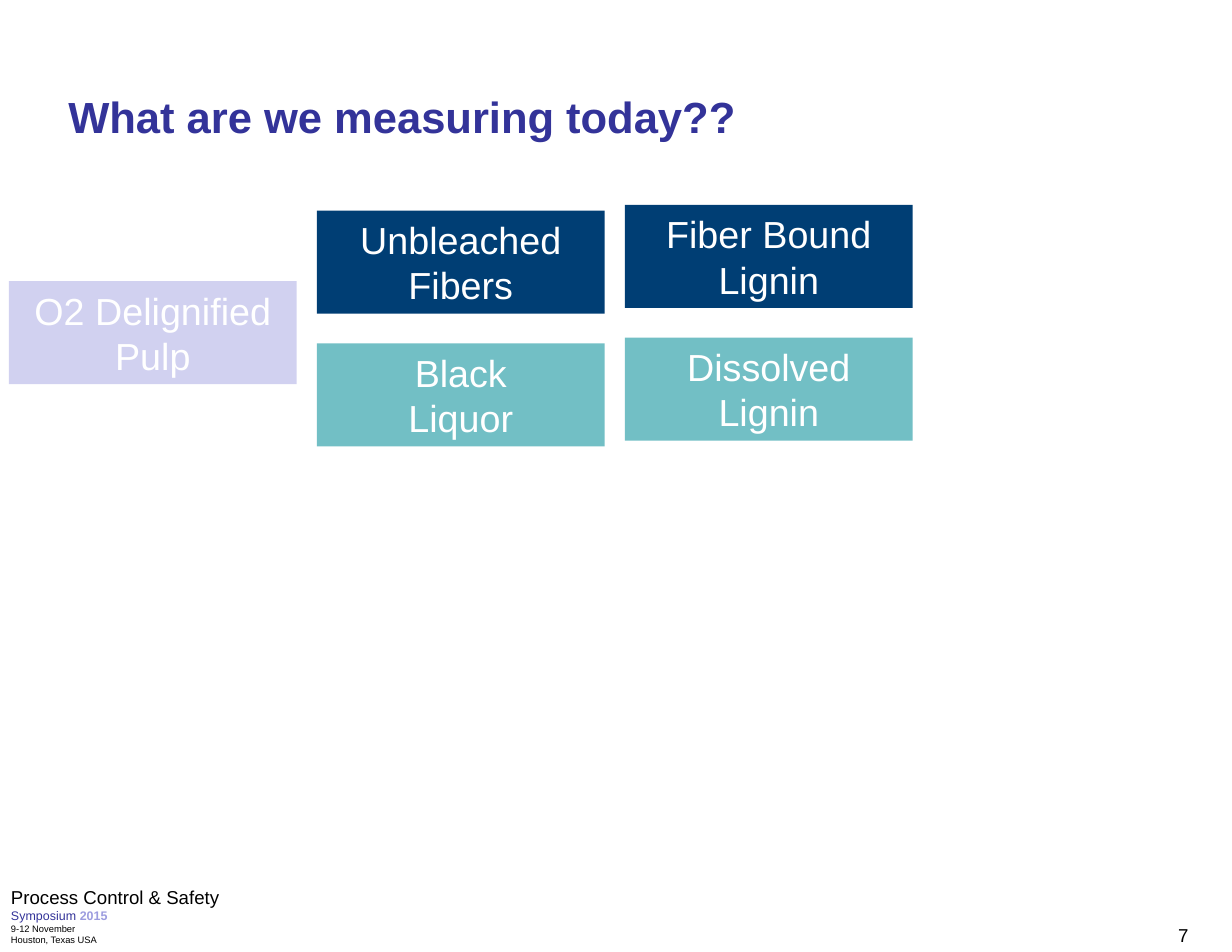
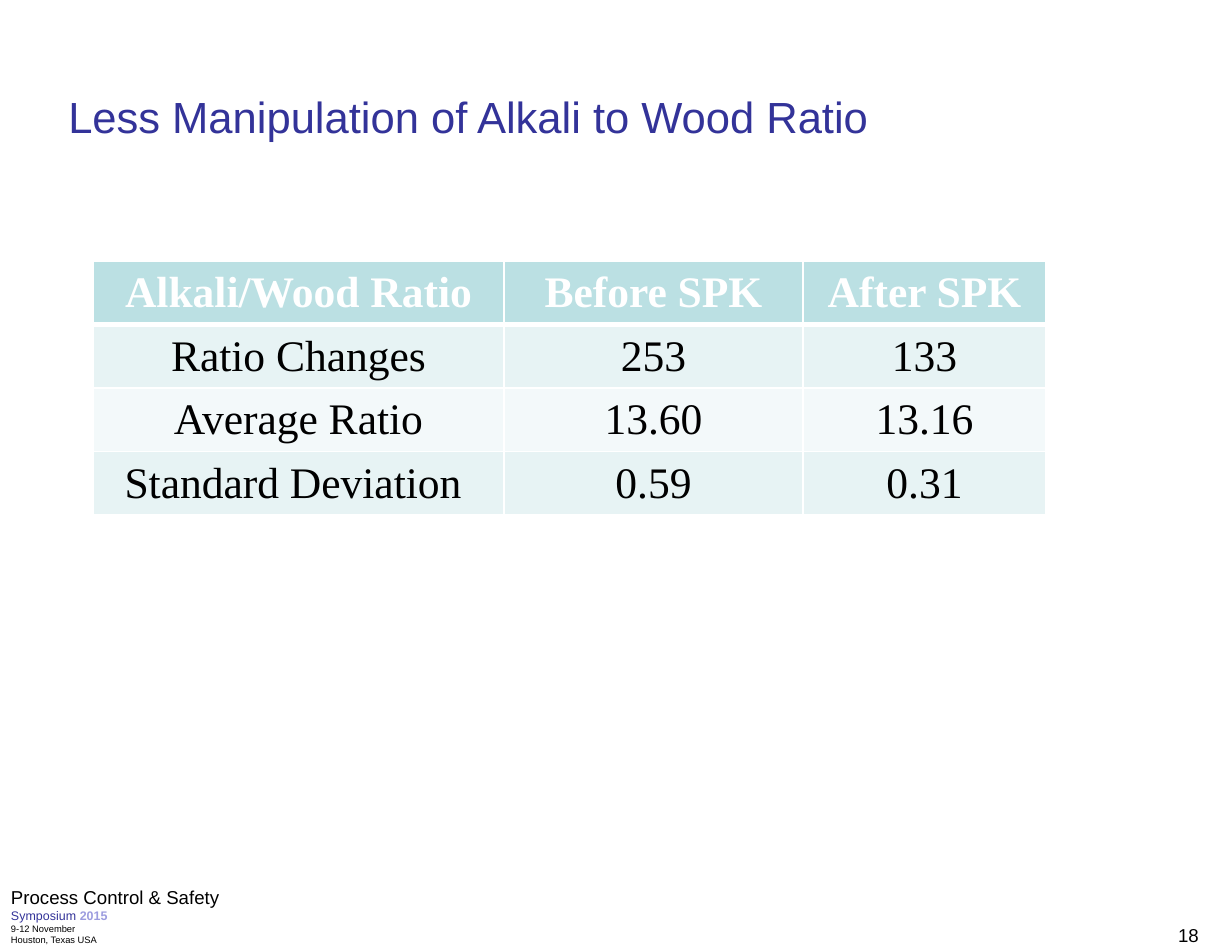
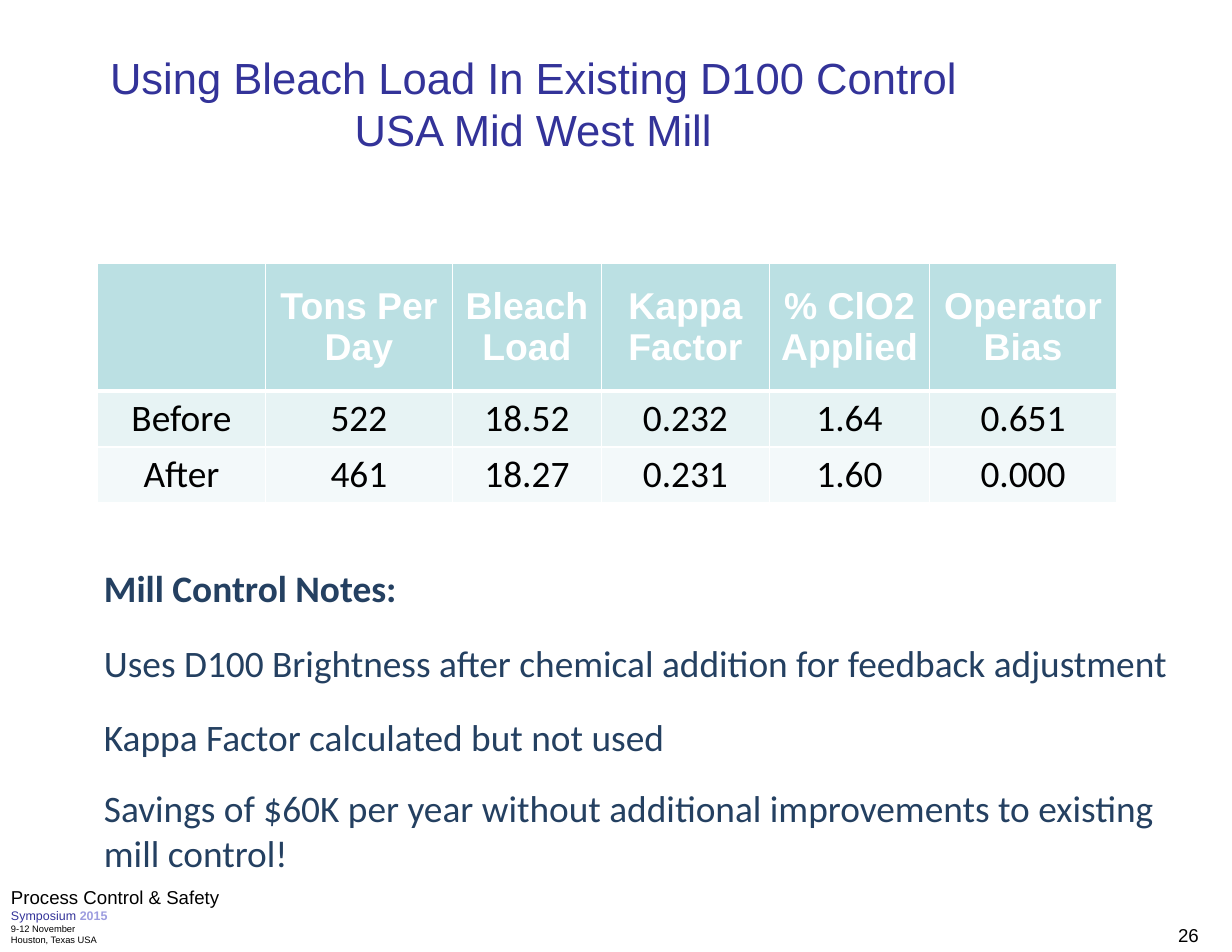
"""Build three pulp mill measurement slides for a process control symposium."""
from dataclasses import dataclass

from lxml.etree import SubElement
from pptx import Presentation
from pptx.dml.color import RGBColor
from pptx.enum.shapes import MSO_SHAPE
from pptx.enum.text import MSO_ANCHOR, PP_ALIGN
from pptx.oxml.ns import qn
from pptx.util import Inches, Pt


@dataclass(frozen=True)
class Theme:
    """Colours and type sizes shared by the slides."""
    white: str = "FFFFFF"
    black: str = "000000"
    indigo: str = "333399"
    lavender: str = "9C9CDF"
    pale_lavender: str = "D1D1F0"
    teal: str = "72BFC5"
    navy: str = "003E74"
    note: str = "244061"
    header: str = "BBE0E3"
    bands: tuple = ("E7F3F4", "F3F9FA")
    title_size: float = 28
    label_size: float = 24.2
    body_size: float = 24
    small_size: float = 12
    symposium_size: float = 8
    venue_size: float = 6


THEME = Theme()


def style(size, color, name="Arial", bold=False):
    """Return the format values of a run."""
    return {"size": Pt(size), "name": name, "bold": bold,
            "color": RGBColor.from_string(color)}


def add_run(paragraph, text, look):
    """Add styled text, turning newlines into line breaks."""
    for index, line in enumerate(text.split("\n")):
        if index:
            paragraph.add_line_break()
        run = paragraph.add_run()
        run.text = line
        for key, value in look.items():
            if key == "color":
                run.font.color.rgb = value
            else:
                setattr(run.font, key, value)


def write(frame, paragraphs, align=PP_ALIGN.LEFT):
    """Fill a text frame with paragraphs, each a list of (text, look) runs."""
    for index, runs in enumerate(paragraphs):
        paragraph = frame.add_paragraph() if index else frame.paragraphs[0]
        paragraph.alignment = align
        for text, look in runs:
            add_run(paragraph, text, look)


def add_text(slide, box, paragraphs, align=PP_ALIGN.LEFT, wrap=True):
    """Add a text box and return its frame."""
    frame = slide.shapes.add_textbox(*map(Inches, box)).text_frame
    frame.word_wrap = wrap
    write(frame, paragraphs, align)
    return frame


def add_title(slide, text, box=(0.5, 0.75, 9.35, 0.58), bold=False, align=PP_ALIGN.LEFT):
    """Add the slide title."""
    look = style(THEME.title_size, THEME.indigo, bold=bold)
    frame = add_text(slide, box, [[(text, look)]], align)
    insets = {"margin_left": 0.11, "margin_right": 0.11,
              "margin_top": 0.06, "margin_bottom": 0.06}
    for key, value in insets.items():
        setattr(frame, key, Inches(value))
    frame.vertical_anchor = MSO_ANCHOR.MIDDLE


def add_footer(slide, number):
    """Add the page number and the symposium details."""
    small = style(THEME.small_size, THEME.black)
    venue = style(THEME.venue_size, THEME.black)
    add_text(slide, (10.42, 8.2, 0.5, 0.3), [[(str(number), small)]])
    add_text(slide, (0, 7.86, 2.44, 0.64), [
        [("Process Control & Safety", small)],
        [("Symposium ", style(THEME.symposium_size, THEME.indigo)),
         ("2015", style(THEME.symposium_size, THEME.lavender, bold=True))],
        [("9-12 November", venue)],
        [("Houston, Texas USA", venue)],
    ])


def add_label(slide, left, top, lines, fill):
    """Add a filled rectangle with centred white lines."""
    label = slide.shapes.add_shape(
        MSO_SHAPE.RECTANGLE, *map(Inches, (left, top, 2.57, 0.92)))
    label.shadow.inherit = False
    label.fill.solid()
    label.fill.fore_color.rgb = RGBColor.from_string(fill)
    label.line.fill.background()
    look = style(THEME.label_size, THEME.white)
    label.text_frame.word_wrap = True
    write(label.text_frame, [[(line, look)] for line in lines], PP_ALIGN.CENTER)


def add_borders(cell, bottom):
    """Draw white cell borders with the given bottom width in points."""
    properties = cell._tc.get_or_add_tcPr()
    for side, width in {"lnL": 1, "lnR": 1, "lnT": 1, "lnB": bottom}.items():
        border = SubElement(properties, qn(f"a:{side}"), w=str(Pt(width)))
        fill = SubElement(border, qn("a:solidFill"))
        SubElement(fill, qn("a:srgbClr"), val=THEME.white)


def add_data_table(slide, corner, widths, heights, rows, head_look, body_look):
    """Add a centred table with a header row and alternating bands."""
    table = slide.shapes.add_table(
        len(rows), len(widths), *map(Inches, (*corner, sum(widths), sum(heights)))).table
    for column, width in zip(table.columns, widths):
        column.width = Inches(width)
    for index, (row, height, texts) in enumerate(zip(table.rows, heights, rows)):
        row.height = Inches(height)
        fill = THEME.bands[(index - 1) % 2] if index else THEME.header
        look = body_look if index else head_look
        for cell, text in zip(row.cells, texts):
            add_borders(cell, 1 if index else 3)
            cell.fill.solid()
            cell.fill.fore_color.rgb = RGBColor.from_string(fill)
            cell.vertical_anchor = MSO_ANCHOR.MIDDLE
            if text:
                write(cell.text_frame, [[(line, look)] for line in text.split("\n")],
                      PP_ALIGN.CENTER)


def build_measurements(slide):
    """Show what is measured today."""
    add_title(slide, "What are we measuring today??", bold=True)
    add_label(slide, 0.08, 2.51, ["O2 Delignified Pulp"], THEME.pale_lavender)
    pairs = [
        (2.83, 1.88, ["Unbleached Fibers"], ["Black", "Liquor"]),
        (5.58, 1.83, ["Fiber Bound", "Lignin"], ["Dissolved", "Lignin"]),
    ]
    for left, top, solid, dissolved in pairs:
        add_label(slide, left, top + 1.185, dissolved, THEME.teal)
        add_label(slide, left, top, solid, THEME.navy)


def build_alkali_ratio(slide):
    """Compare the alkali to wood ratio before and after."""
    add_title(slide, "Less Manipulation of Alkali to Wood Ratio")
    serif = "Times New Roman"
    add_data_table(
        slide, (0.83, 2.33), (3.67, 2.67, 2.17), [0.53] * 4,
        [("Alkali/Wood Ratio", "Before SPK", "After SPK"),
         ("Ratio Changes", "253", "133"),
         ("Average Ratio", "13.60", "13.16"),
         ("Standard Deviation ", "0.59", "0.31")],
        style(THEME.title_size, THEME.white, serif, True),
        style(THEME.title_size, THEME.black, serif))


def build_bleach_load(slide):
    """Show the bleach load results and the mill control notes."""
    add_title(slide, "Using Bleach Load In Existing D100 Control\nUSA Mid West Mill",
              (0.17, 0.42, 9.18, 1), align=PP_ALIGN.CENTER)
    notes = [
        (5, 3.19, 0.5, "Mill Control Notes:", True, False),
        (5.67, 9.83, 0.5, "Uses D100 Brightness after chemical addition "
         "for feedback adjustment", False, True),
        (6.33, 5.25, 0.5, "Kappa Factor calculated but not used", False, False),
        (6.96, 9.83, 0.91, "Savings of $60K per year without additional "
         "improvements to existing mill control!", False, True),
    ]
    for top, width, height, note, bold, wrap in notes:
        look = style(THEME.body_size, THEME.note, "Calibri", bold)
        add_text(slide, (0.83, top, width, height), [[(note, look)]], wrap=wrap)
    add_data_table(
        slide, (0.87, 2.35), (1.5, 1.67, 1.33, 1.5, 1.43, 1.67), (1.14, 0.5, 0.5),
        [("", "Tons Per\nDay", "Bleach\nLoad", "Kappa\nFactor",
          "% ClO2\nApplied", "Operator\nBias"),
         ("Before", "522", "18.52", "0.232", "1.64", "0.651"),
         ("After", "461", "18.27", "0.231", "1.60", "0.000")],
        style(THEME.body_size, THEME.white, bold=True),
        style(THEME.body_size, THEME.black, "Calibri"))


def main():
    """Build and save the deck."""
    deck = Presentation()
    deck.slide_width, deck.slide_height = Inches(11), Inches(8.5)
    pages = {7: build_measurements, 18: build_alkali_ratio, 26: build_bleach_load}
    for number, build in pages.items():
        slide = deck.slides.add_slide(deck.slide_layouts[6])
        build(slide)
        add_footer(slide, number)
    deck.save("out.pptx")


if __name__ == "__main__":
    main()
